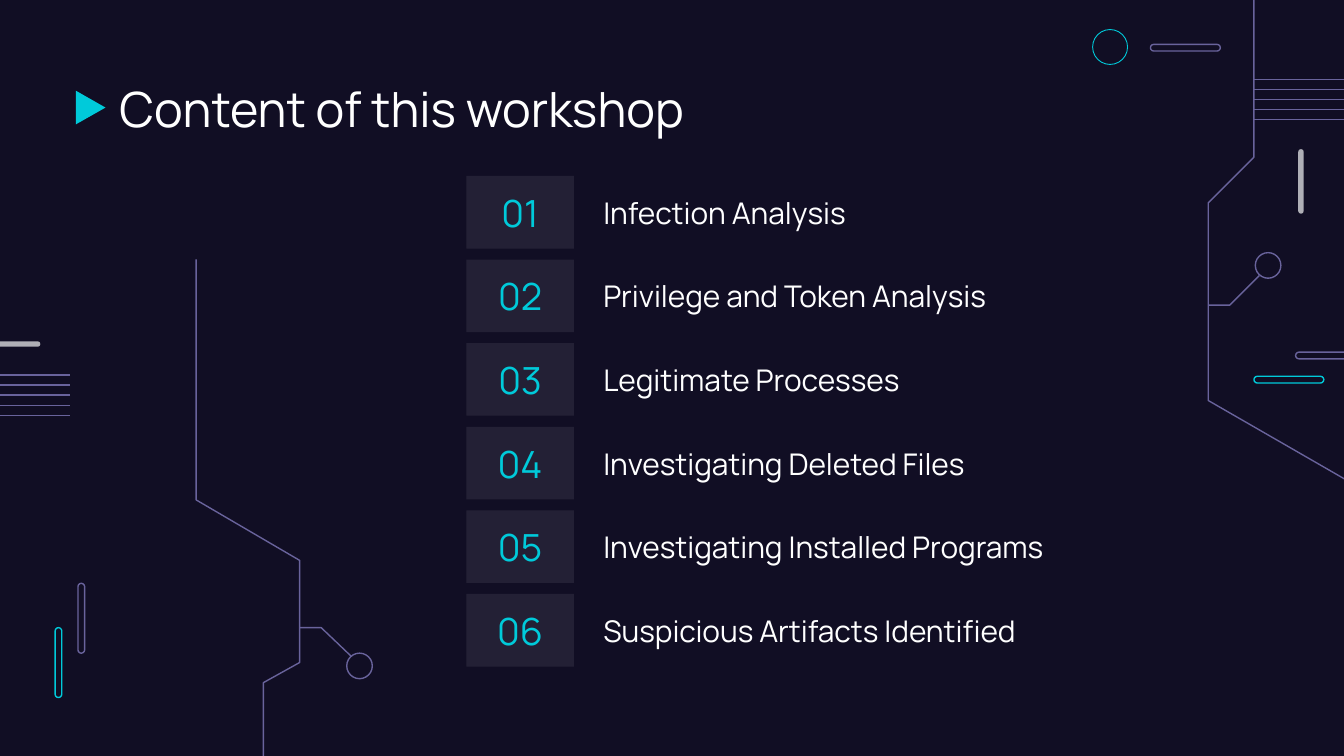
from dataclasses import dataclass

import pptx
import pptx.dml.color
import pptx.enum.shapes
import pptx.enum.text
import pptx.oxml.ns
import pptx.util
from lxml import etree
from pptx.util import Inches

SHAPE = pptx.enum.shapes.MSO_SHAPE
ANCHOR = pptx.enum.text.MSO_ANCHOR
ALIGN = pptx.enum.text.PP_ALIGN

NAVY, WHITE, CYAN, PURPLE, GREY = "110E24", "FFFFFF", "00CADA", "69639C", "AFAFB6"
FONT = "Manrope"


@dataclass
class Box:
    x: float
    y: float
    w: float
    h: float

    def emu(self) -> tuple:
        return Inches(self.x), Inches(self.y), Inches(self.w), Inches(self.h)


@dataclass
class Outline:
    kind: int
    box: Box
    color: str
    width: float = 0.75


@dataclass
class Stripes:
    x1: float
    x2: float
    top: float


TOPICS = [
    "Infection Analysis",
    "Privilege and Token Analysis",
    "Legitimate Processes",
    "Investigating Deleted Files",
    "Investigating Installed Programs",
    "Suspicious Artifacts Identified",
]
PILL, CIRCLE = SHAPE.ROUNDED_RECTANGLE, SHAPE.OVAL
OUTLINES = [
    Outline(PILL, Box(0.41, 4.67, 0.05, 0.52), CYAN),
    Outline(PILL, Box(0.58, 4.34, 0.05, 0.52), PURPLE),
    Outline(PILL, Box(9.33, 2.8, 0.52, 0.05), CYAN),
    Outline(PILL, Box(9.64, 2.62, 0.52, 0.05), PURPLE),
    Outline(PILL, Box(8.56, 0.33, 0.52, 0.05), PURPLE),
    Outline(CIRCLE, Box(8.13, 0.22, 0.26, 0.26), CYAN, 0.47),
    Outline(CIRCLE, Box(9.34, 1.88, 0.19, 0.19), PURPLE),
    Outline(CIRCLE, Box(2.58, 4.86, 0.19, 0.19), PURPLE),
]
GREY_BARS = [Box(9.66, 1.11, 0.04, 0.48), Box(-0.18, 2.54, 0.48, 0.04)]
STRIPES = [Stripes(9.33, 10.8, 0.59), Stripes(0.52, -0.61, 2.79)]
STRIPE_COUNT, STRIPE_SPAN = 5, 0.3
CIRCUITS = [
    [(9.37, 2.05), (9.15, 2.27), (8.99, 2.27)],
    [(10.12, 3.63), (8.99, 2.98), (8.99, 1.51), (9.33, 1.17), (9.33, -0.06)],
    [(2.61, 4.88), (2.39, 4.67), (2.23, 4.67)],
    [(1.46, 1.93), (1.46, 3.72), (2.23, 4.17), (2.23, 4.93), (1.96, 5.08), (1.96, 5.71)],
]
ROW_TOP, LAST_ROW_TOP, ROW_H = 1.31, 4.42, 0.54


def rgb(color: str) -> pptx.dml.color.RGBColor:
    return pptx.dml.color.RGBColor.from_string(color)


def set_line(sp, color: str, width: float = 0.75) -> None:
    sp.line.color.rgb = rgb(color)
    sp.line.width = pptx.util.Pt(width)


def add_solid(s, kind: int, box: Box, color: str):
    sp = s.shapes.add_shape(kind, *box.emu())
    sp.shadow.inherit = False
    sp.fill.solid()
    sp.fill.fore_color.rgb = rgb(color)
    sp.line.fill.background()
    if kind == PILL:
        sp.adjustments[0] = 0.5
    return sp


def add_outline(s, item: Outline) -> None:
    sp = add_solid(s, item.kind, item.box, NAVY)
    sp.fill.background()
    set_line(sp, item.color, item.width)


def add_stripes(s, stripes: Stripes) -> None:
    for i in range(STRIPE_COUNT):
        y = Inches(stripes.top + i * STRIPE_SPAN / (STRIPE_COUNT - 1))
        line = s.shapes.add_connector(
            pptx.enum.shapes.MSO_CONNECTOR.STRAIGHT, Inches(stripes.x1), y, Inches(stripes.x2), y
        )
        set_line(line, PURPLE)
        etree.SubElement(line._element.spPr, pptx.oxml.ns.qn("a:effectLst"))


def add_circuit(s, points: list[tuple[float, float]]) -> None:
    start, *rest = [(Inches(x), Inches(y)) for x, y in points]
    builder = s.shapes.build_freeform(*start)
    builder.add_line_segments(rest, close=False)
    sp = builder.convert_to_shape()
    sp.shadow.inherit = False
    sp.fill.background()
    set_line(sp, PURPLE)


def set_transparency(sp, opacity: int) -> None:
    """Give the solid fill an opacity in percent."""
    color = sp._element.spPr.find(".//" + pptx.oxml.ns.qn("a:srgbClr"))
    etree.SubElement(color, pptx.oxml.ns.qn("a:alpha"), val=str(opacity * 1000))


def write(sp, text: str, size: int, color: str, anchor=ANCHOR.MIDDLE, align=ALIGN.LEFT) -> None:
    tf = sp.text_frame
    tf.word_wrap = True
    tf.vertical_anchor = anchor
    tf.margin_left = tf.margin_right = tf.margin_top = tf.margin_bottom = Inches(0.1)
    p = tf.paragraphs[0]
    p.alignment = align
    r = p.add_run()
    r.text = text
    r.font.name = FONT
    r.font.size = pptx.util.Pt(size)
    r.font.color.rgb = rgb(color)


def add_topic(s, index: int, topic: str) -> None:
    y = ROW_TOP + index * (LAST_ROW_TOP - ROW_TOP) / (len(TOPICS) - 1)
    number = add_solid(s, SHAPE.RECTANGLE, Box(3.47, y, 0.8, ROW_H), WHITE)
    set_transparency(number, 8)
    write(number, f"{index + 1:02d}", 20, CYAN, align=ALIGN.CENTER)
    label = s.shapes.add_textbox(*Box(4.39, y, 4.55, ROW_H).emu())
    write(label, topic, 16, WHITE)


def main() -> None:
    prs = pptx.Presentation()
    prs.slide_width = Inches(10)
    prs.slide_height = Inches(10) * 9 // 16
    s = prs.slides.add_slide(prs.slide_layouts[6])
    s.background.fill.solid()
    s.background.fill.fore_color.rgb = rgb(NAVY)

    for item in OUTLINES:
        add_outline(s, item)
    for points in CIRCUITS:
        add_circuit(s, points)
    for stripes in STRIPES:
        add_stripes(s, stripes)
    for bar in GREY_BARS:
        add_solid(s, PILL, bar, GREY)

    marker = add_solid(s, SHAPE.FLOWCHART_MERGE, Box(0.55, 0.69, 0.25, 0.22), CYAN)
    marker.rotation = 270
    title = s.shapes.add_textbox(*Box(0.79, 0.49, 8.43, 0.63).emu())
    write(title, "Content of this workshop", 26, WHITE, ANCHOR.TOP)
    for index, topic in enumerate(TOPICS):
        add_topic(s, index, topic)
    prs.save("out.pptx")


if __name__ == "__main__":
    main()
